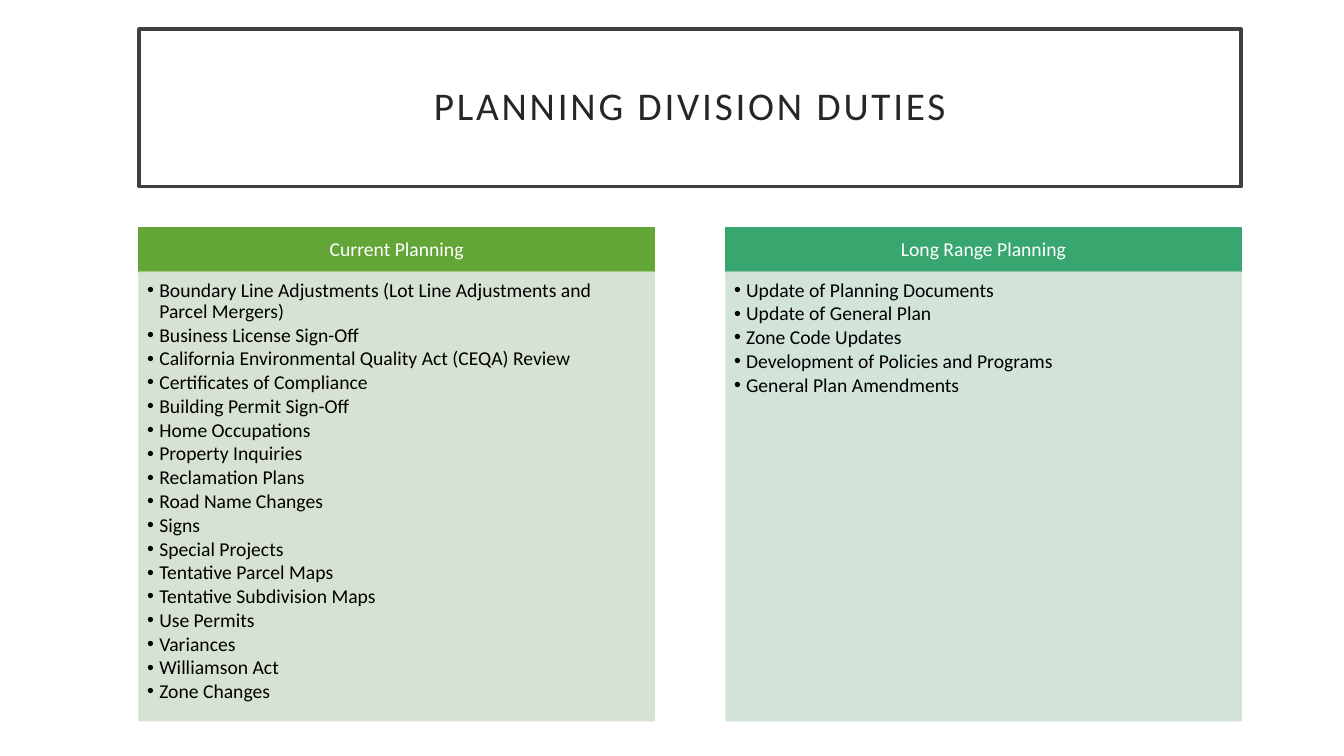
"""Build a slide that lists planning duties in two panels."""
from lxml.etree import SubElement
from pptx import Presentation
from pptx.dml.color import RGBColor
from pptx.enum.shapes import MSO_SHAPE
from pptx.enum.text import MSO_ANCHOR, PP_ALIGN
from pptx.oxml.ns import qn
from pptx.util import Inches, Pt

WHITE = RGBColor(0xFF, 0xFF, 0xFF)
BLACK = RGBColor(0x00, 0x00, 0x00)
INK = RGBColor(0x26, 0x26, 0x26)
FRAME = RGBColor(0x40, 0x40, 0x40)
GREEN = RGBColor(0x63, 0xA5, 0x37)
PALE = RGBColor(0xD3, 0xE1, 0xCE)
TEAL = RGBColor(0x37, 0xA7, 0x6F)
MIST = RGBColor(0xCE, 0xE1, 0xD5)

FONT = "Calibri"
LEFT, WIDE = 1.38, 10.93
COL = 5.11
STEP = WIDE - COL
TOP, HEAD, BODY = 2.26, 0.44, 4.45
HANG = Inches(0.12)

PANELS = [
    ("Current Planning", GREEN, PALE, [
        "Boundary Line Adjustments (Lot Line Adjustments and Parcel Mergers)",
        "Business License Sign-Off",
        "California Environmental Quality Act (CEQA) Review",
        "Certificates of Compliance",
        "Building Permit Sign-Off",
        "Home Occupations",
        "Property Inquiries",
        "Reclamation Plans",
        "Road Name Changes",
        "Signs",
        "Special Projects",
        "Tentative Parcel Maps",
        "Tentative Subdivision Maps",
        "Use Permits",
        "Variances",
        "Williamson Act",
        "Zone Changes",
    ]),
    ("Long Range Planning", TEAL, MIST, [
        "Update of Planning Documents",
        "Update of General Plan",
        "Zone Code Updates",
        "Development of Policies and Programs",
        "General Plan Amendments",
    ]),
]


def add_box(slide, area, fill, line, weight=1, alpha=None):
    box = slide.shapes.add_shape(MSO_SHAPE.RECTANGLE, *map(Inches, area))
    box.shadow.inherit = False
    box.fill.solid()
    box.fill.fore_color.rgb = fill
    box.line.color.rgb = line
    box.line.width = Pt(weight)
    if alpha:
        for color in box._element.spPr.iter(qn("a:srgbClr")):
            SubElement(color, qn("a:alpha"), val=str(alpha * 1000))
    return box


def add_bullet(para):
    props = para._p.get_or_add_pPr()
    props.set("marL", str(HANG))
    props.set("indent", str(-HANG))
    SubElement(props, qn("a:buFont"), typeface="Arial")
    SubElement(props, qn("a:buChar"), char="•")


def put_text(box, lines, color, size=14, inset=(0.11, 0.06, 0.11, 0.06),
             align=PP_ALIGN.CENTER, anchor=MSO_ANCHOR.MIDDLE,
             after=0, track=0, bullet=False):
    frame = box.text_frame
    frame.word_wrap = True
    frame.vertical_anchor = anchor
    (frame.margin_left, frame.margin_top,
     frame.margin_right, frame.margin_bottom) = map(Inches, inset)
    for row, line in enumerate(lines):
        para = frame.add_paragraph() if row else frame.paragraphs[0]
        para.alignment = align
        para.line_spacing = 0.9
        para.space_after = Pt(after)
        if bullet:
            add_bullet(para)
        run = para.add_run()
        run.text = line
        run.font.name = FONT
        run.font.size = Pt(size)
        run.font.color.rgb = color
        if track:
            run.font._element.set("spc", str(track * 100))


def add_panel(slide, left, title, dark, light, duties):
    head = add_box(slide, (left, TOP, COL, HEAD), dark, dark)
    put_text(head, [title], WHITE)
    body = add_box(slide, (left, TOP + HEAD, COL, BODY), light, light, alpha=90)
    put_text(body, duties, BLACK, inset=(0.08, 0.08, 0.11, 0.12),
             align=PP_ALIGN.LEFT, anchor=MSO_ANCHOR.TOP,
             after=1.85, bullet=True)


def main():
    deck = Presentation()
    deck.slide_width, deck.slide_height = Inches(13.33), Inches(7.5)
    slide = deck.slides.add_slide(deck.slide_layouts[6])
    title = add_box(slide, (LEFT, 0.29, WIDE, 1.56), WHITE, FRAME, weight=2.5)
    put_text(title, ["PLANNING DIVISION DUTIES"], INK, size=28,
             inset=(0.2,) * 4, track=2)
    for col, panel in enumerate(PANELS):
        add_panel(slide, LEFT + col * STEP, *panel)
    deck.save("out.pptx")


if __name__ == "__main__":
    main()
